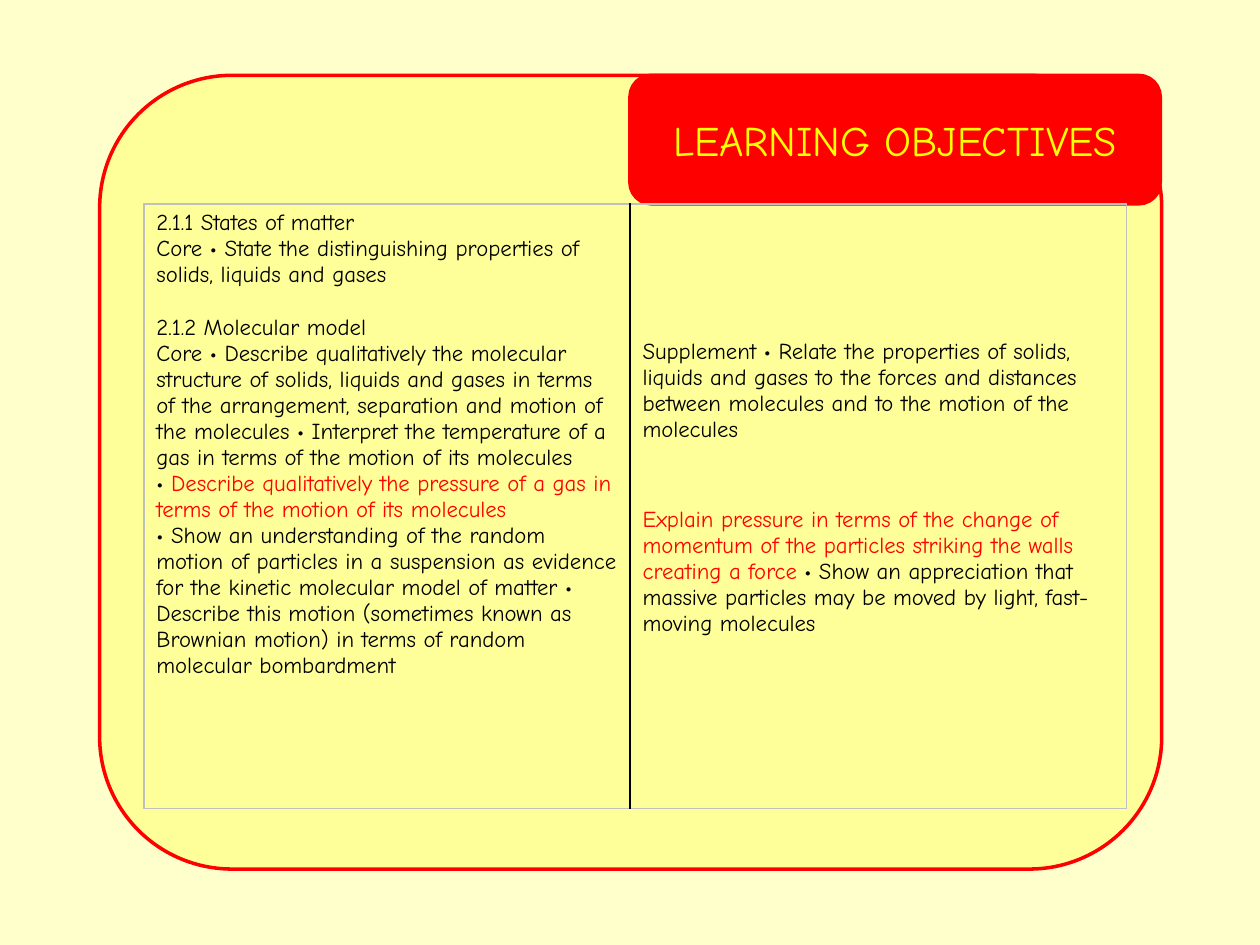
from dataclasses import dataclass
from typing import Any, Optional

from lxml import etree
from pptx import Presentation
from pptx.dml.color import RGBColor
from pptx.enum.shapes import MSO_SHAPE
from pptx.enum.text import MSO_ANCHOR, PP_ALIGN
from pptx.oxml.ns import qn
from pptx.util import Cm, Pt

RECT = MSO_SHAPE.RECTANGLE
ROUND = MSO_SHAPE.ROUNDED_RECTANGLE
MIDDLE = MSO_ANCHOR.MIDDLE
CENTER = PP_ALIGN.CENTER

CREAM = RGBColor(0xFF, 0xFF, 0xCC)
LEMON = RGBColor(0xFF, 0xFF, 0x99)
YELLOW = RGBColor(0xFF, 0xFF, 0x00)
RED = RGBColor(0xFF, 0x00, 0x00)
BLACK = RGBColor(0x00, 0x00, 0x00)
GRAY = RGBColor(0xC0, 0xC0, 0xC0)

FONT = "Comic Neue"


@dataclass
class Panel:
    kind: Any
    box: tuple[float, float, float, float]
    fill: RGBColor
    edge: Optional[RGBColor] = None


@dataclass
class Run:
    text: str
    color: RGBColor = BLACK


@dataclass
class Para:
    runs: list[Run]
    gap: float = 0


PAGE = Panel(RECT, (0, 0, 25.4, 19.05), CREAM)
FRAME = Panel(ROUND, (2.01, 1.52, 21.41, 16), LEMON, RED)
BANNER = Panel(ROUND, (12.7, 1.52, 10.69, 2.59), RED, RED)

WIDTHS = (9.8, 10.01)
TOPS = (0.13, 2.73)

CORE = [
    Para([Run("2.1.1 States of matter")]),
    Para([Run("Core • State the distinguishing properties of solids, liquids and gases")]),
    Para([Run("2.1.2 Molecular model")], 15),
    Para([Run(
        "Core • Describe qualitatively the molecular structure of solids, "
        "liquids and gases in terms of the arrangement, separation and motion "
        "of the molecules • Interpret the temperature of a gas in terms of the "
        "motion of its molecules"
    )]),
    Para([
        Run("• "),
        Run("Describe qualitatively the pressure of a gas in terms of the "
            "motion of its molecules", RED),
    ]),
    Para([Run(
        "• Show an understanding of the random motion of particles in a "
        "suspension as evidence for the kinetic molecular model of matter • "
        "Describe this motion (sometimes known as Brownian motion) in terms of "
        "random molecular bombardment"
    )]),
]

EXTRA = [
    Para([Run(
        "Supplement • Relate the properties of solids, liquids and gases to the "
        "forces and distances between molecules and to the motion of the molecules"
    )]),
    Para([
        Run("Explain pressure in terms of the change of momentum of the "
            "particles striking the walls creating a force ", RED),
        Run("• Show an appreciation that massive particles may be moved by "
            "light, fast- moving molecules"),
    ], 36.5),
]


def format(item: Any, values: dict[str, Any]) -> None:
    for name, value in values.items():
        setattr(item, name, value)


def paint(item: Any, color: RGBColor) -> None:
    item.fill.solid()
    item.fill.fore_color.rgb = color


def draw(slide: Any, panel: Panel) -> Any:
    shape = slide.shapes.add_shape(panel.kind, *map(Cm, panel.box))
    shape.shadow.inherit = False
    paint(shape, panel.fill)
    if panel.edge is None:
        shape.line.fill.background()
    else:
        shape.line.color.rgb = panel.edge
        shape.line.width = Pt(2)
    return shape


def write(frame: Any, paras: list[Para], size: float, style: dict[str, Any]) -> None:
    frame.word_wrap = True
    for i, para in enumerate(paras):
        line = frame.add_paragraph() if i else frame.paragraphs[0]
        format(line, style | {"space_before": Pt(para.gap)})
        for part in para.runs:
            run = line.add_run()
            run.text = part.text
            format(run.font, {"name": FONT, "size": Pt(size), "bold": False})
            run.font.color.rgb = part.color


def rule(cell: Any, sides: dict[str, RGBColor]) -> None:
    props = cell._tc.get_or_add_tcPr()
    for side, color in sides.items():
        line = etree.SubElement(props, qn(f"a:ln{side}"), w=str(Pt(1)))
        fill = etree.SubElement(line, qn("a:solidFill"))
        etree.SubElement(fill, qn("a:srgbClr"), val=str(color))


def grid(slide: Any) -> None:
    box = map(Cm, (2.9, 4.11, sum(WIDTHS), 12.19))
    table = slide.shapes.add_table(1, len(WIDTHS), *box).table
    format(table, {"first_row": False, "horz_banding": False})
    edges = [GRAY, BLACK, GRAY]
    for i, paras in enumerate((CORE, EXTRA)):
        table.columns[i].width = Cm(WIDTHS[i])
        cell = table.cell(0, i)
        rule(cell, {"L": edges[i], "R": edges[i + 1], "T": GRAY, "B": GRAY})
        cell.fill.background()
        cell.margin_top = Cm(TOPS[i])
        write(cell.text_frame, paras, 13, {})


def main() -> None:
    deck = Presentation()
    format(deck, {"slide_width": Cm(25.4), "slide_height": Cm(19.05)})
    slide = deck.slides.add_slide(deck.slide_layouts[6])
    paint(slide.background, LEMON)
    draw(slide, PAGE)
    draw(slide, FRAME)
    title = draw(slide, BANNER).text_frame
    title.vertical_anchor = MIDDLE
    write(title, [Para([Run("LEARNING OBJECTIVES", YELLOW)])], 24, {"alignment": CENTER})
    grid(slide)
    deck.save("out.pptx")


if __name__ == "__main__":
    main()
